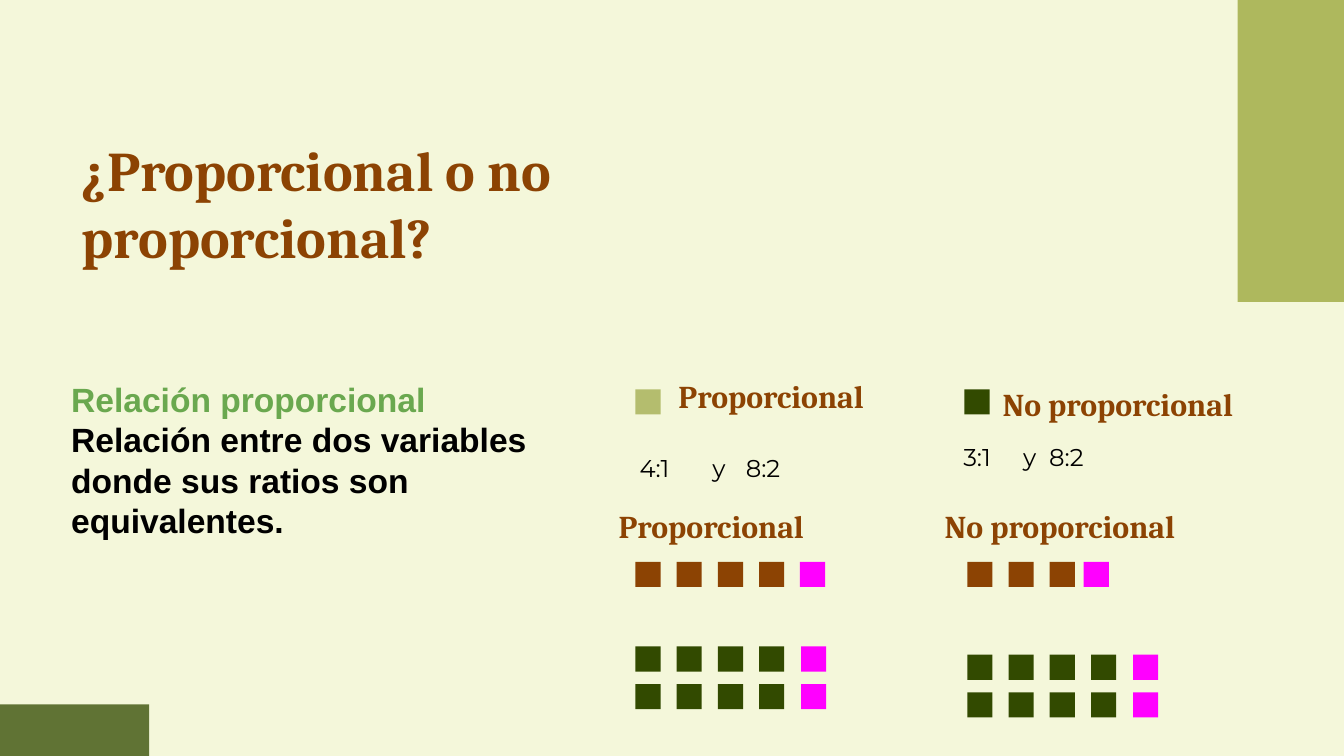
"""Builds a slide that compares proportional and non-proportional ratios."""
from dataclasses import dataclass

import pptx
import pptx.dml.color
import pptx.enum.shapes
import pptx.enum.text
import pptx.oxml
import pptx.oxml.ns
import pptx.util

Pt = pptx.util.Pt


@dataclass(frozen=True)
class Theme:
    """Colours, fonts and type sizes of the slide."""
    cream: str = "F4F7DA"
    olive: str = "7C8C03"
    light_olive: str = "B4BD6E"
    forest: str = "324A00"
    brown: str = "8C4303"
    magenta: str = "FF00FF"
    green: str = "6AA84F"
    black: str = "000000"
    heading_font: str = "Cambria"
    body_font: str = "Arial"
    ratio_font: str = "Montserrat"
    title_size: int = 30
    label_size: int = 17
    body_size: int = 18
    ratio_size: int = 13


THEME = Theme()
SQUARE = 13.5
PITCH = 22.1


def rgb(color):
    """Return the colour object for a hex string."""
    return pptx.dml.color.RGBColor.from_string(color)


def add_block(page, left, top, width, height, color, opacity=100):
    """Add a plain filled rectangle."""
    block = page.shapes.add_shape(
        pptx.enum.shapes.MSO_SHAPE.RECTANGLE, Pt(left), Pt(top), Pt(width), Pt(height))
    block.shadow.inherit = False
    block.line.fill.background()
    block.fill.solid()
    block.fill.fore_color.rgb = rgb(color)
    if opacity < 100:
        namespace = pptx.oxml.ns.nsdecls("a")
        alpha = pptx.oxml.parse_xml(f'<a:alpha {namespace} val="{opacity * 1000}"/>')
        block.fill._xPr.find(".//" + pptx.oxml.ns.qn("a:srgbClr")).append(alpha)


def add_square(page, left, top, color):
    """Add one counting square."""
    add_block(page, left, top, SQUARE, SQUARE, color)


def add_row(page, left, top, count, color, last_left):
    """Add evenly spaced squares followed by a magenta one."""
    for index in range(count):
        add_square(page, left + index * PITCH, top, color)
    add_square(page, last_left, top, THEME.magenta)


def add_text(page, left, top, width, height, lines, font, size, bold=True):
    """Add a text box from (text, colour) lines and return its paragraphs."""
    box = page.shapes.add_textbox(Pt(left), Pt(top), Pt(width), Pt(height))
    frame = box.text_frame
    frame.word_wrap = True
    frame.vertical_anchor = pptx.enum.text.MSO_ANCHOR.TOP
    frame.margin_left = frame.margin_right = Pt(7.2)
    frame.margin_top = frame.margin_bottom = Pt(7.2)
    for index, (text, color) in enumerate(lines):
        para = frame.add_paragraph() if index else frame.paragraphs[0]
        para.text = text
        para.font.name = font
        para.font.size = Pt(size)
        para.font.bold = bold
        para.font.color.rgb = rgb(color)
    return frame.paragraphs


def add_heading(page, left, top, width, height, text, size=THEME.label_size):
    """Add a brown serif heading."""
    add_text(page, left, top, width, height, [(text, THEME.brown)], THEME.heading_font, size)


def add_ratios(page, left, top, parts, stops):
    """Add a pair of ratios set apart by tab stops."""
    para = add_text(page, left, top, 157.7, 52.6, [("\t".join(parts), THEME.black)],
                    THEME.ratio_font, THEME.ratio_size, bold=False)[0]
    para.line_spacing = 1.15
    para.space_after = Pt(16)
    tabs = "".join(f'<a:tab pos="{int(Pt(stop))}" algn="l"/>' for stop in stops)
    namespace = pptx.oxml.ns.nsdecls("a")
    tab_list = pptx.oxml.parse_xml(f"<a:tabLst {namespace}>{tabs}</a:tabLst>")
    para._p.pPr.find(pptx.oxml.ns.qn("a:defRPr")).addprevious(tab_list)


def main():
    """Build and save the slide."""
    deck = pptx.Presentation()
    deck.slide_width, deck.slide_height = Pt(720), Pt(405)
    page = deck.slides.add_slide(deck.slide_layouts[6])
    page.background.fill.solid()
    page.background.fill.fore_color.rgb = rgb(THEME.cream)
    add_block(page, 663, 0, 57, 161.8, THEME.olive, 58)
    add_block(page, 0, 377.3, 80, 27.7, THEME.forest, 76)

    add_heading(page, 36.7, 65.5, 314, 168.5, "¿Proporcional o no proporcional?", THEME.title_size)
    add_text(page, 31, 195.8, 296.6, 95, [
        ("Relación proporcional", THEME.green),
        ("Relación entre dos variables donde sus ratios son equivalentes.", THEME.black),
    ], THEME.body_font, THEME.body_size)

    add_square(page, 340.4, 208.6, THEME.light_olive)
    add_heading(page, 356.4, 194.4, 136.8, 33, "Proporcional")
    add_ratios(page, 335.5, 233.3, ("4:1", "y", "8:2"), (39, 57))
    add_heading(page, 324.3, 264.4, 136.8, 33, "Proporcional")
    add_row(page, 340.4, 301, 4, THEME.brown, 428.6)
    for top in (346.3, 366.5):
        add_row(page, 340.4, top, 4, THEME.forest, 429.2)

    add_square(page, 516.7, 208.6, THEME.forest)
    add_heading(page, 530, 199, 157.7, 33, "No proporcional")
    add_ratios(page, 509, 227.5, ("3:1", "y", "8:2"), (32, 46))
    add_heading(page, 499, 264.4, 157.7, 33, "No proporcional")
    add_row(page, 518.2, 301, 3, THEME.brown, 580.6)
    for top in (350.8, 370.9):
        add_row(page, 518.2, top, 4, THEME.forest, 607)

    deck.save("out.pptx")


if __name__ == "__main__":
    main()
